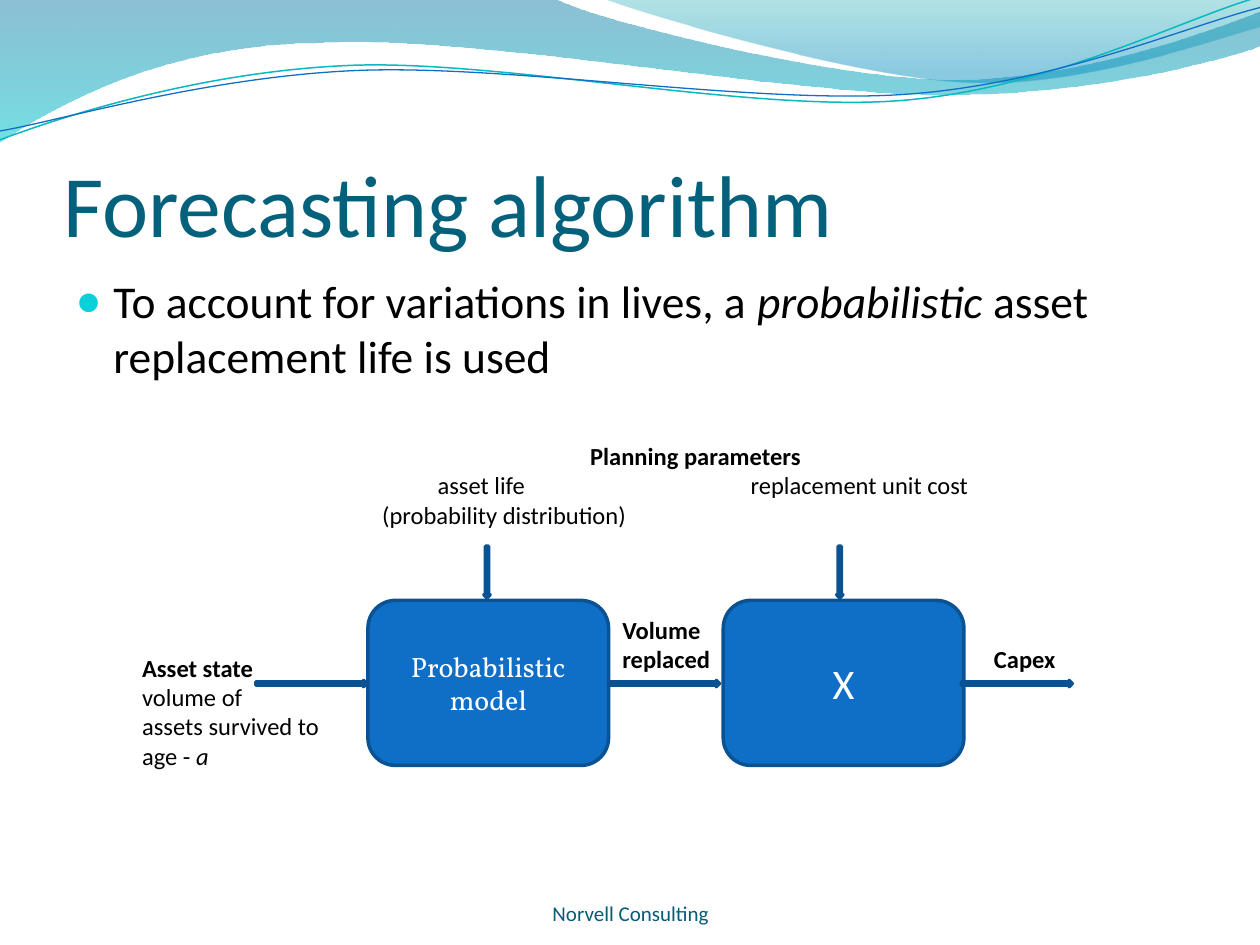
from lxml import etree
from pptx import Presentation
from pptx import util as u
from pptx.dml.color import RGBColor
from pptx.enum import shapes, text
from pptx.oxml.ns import qn

# Lengths are cells of a grid with 100 columns and 75 rows.
CELL = u.Inches(0.1)
HUES = {
    "title": "04617B", "foot": "045D75", "ink": "000000", "white": "FFFFFF",
    "box": "0F6FC6", "edge": "0B5292", "dot": "0BD0D9", "teal": "0AB8BF",
    "sea": "0074A1", "aqua": "00C6CF", "mint": "00A1A9", "sky": "008BBF",
}
LEFT, MID = text.PP_ALIGN.LEFT, text.PP_ALIGN.CENTER
ARROW = 0.5


def hue(name):
    return RGBColor.from_string(HUES[name])


def cells(*nums):
    return [u.Emu(round(n * CELL)) for n in nums]


def node(tag, **attrs):
    return etree.Element(qn(tag), {k: str(v) for k, v in attrs.items()})


def write(par, line, size, color="ink", bold=False, align=LEFT, face="Calibri"):
    """Fill a paragraph; words between asterisks are italic."""
    for i, part in enumerate(line.split("*")):
        if part:
            run = par.add_run()
            run.text = part
            if i % 2:
                run.font.italic = True
    par.alignment = align
    font = par.font
    font.name, font.size, font.bold = face, u.Pt(size), bold
    font.color.rgb = hue(color)


def indent(par, left, first=0):
    props = par._p.get_or_add_pPr()
    for key, size in zip(("marL", "indent"), cells(left, first)):
        props.set(key, str(size))


def bullet(par, char, color, share):
    """Set the bullet ahead of the paragraph's default font."""
    tint = node("a:buClr")
    tint.append(node("a:srgbClr", val=HUES[color]))
    last = par._p.pPr[-1]
    for item in (tint, node("a:buSzPct", val=share * 1000), node("a:buChar", char=char)):
        last.addprevious(item)


def place(shape, *spot):
    shape.left, shape.top, shape.width, shape.height = cells(*spot)


def label(slide, spot, lines, size=14, **look):
    """Add a text box whose first line is bold, and return its frame."""
    frame = slide.shapes.add_textbox(*cells(*spot)).text_frame
    frame.word_wrap = True
    for i, line in enumerate(lines):
        par = frame.add_paragraph() if i else frame.paragraphs[0]
        write(par, line, size, **{"bold": i == 0, **look})
    return frame


def block(slide, kind, spot):
    shape = slide.shapes.add_shape(kind, *cells(*spot))
    shape.shadow.inherit = False
    shape.fill.solid()
    shape.fill.fore_color.rgb = hue("box")
    shape.line.color.rgb = hue("edge")
    shape.line.width = u.Pt(2)
    return shape


def box(slide, left, top, line, size, face):
    shape = block(slide, shapes.MSO_SHAPE.ROUNDED_RECTANGLE, (left, top, 19.1, 13.1))
    frame = shape.text_frame
    frame.vertical_anchor = text.MSO_ANCHOR.MIDDLE
    write(frame.paragraphs[0], line, size, "white", align=MID, face=face)


def arrow(slide, left, top, size, turn=0):
    shape = block(slide, shapes.MSO_SHAPE.RIGHT_ARROW, (left, top, size, ARROW))
    shape.rotation = turn


def curve(slide, start, legs, close):
    """Draw an outline; a leg is an end point or a Bezier's last three points."""
    pen = slide.shapes.build_freeform(*cells(*start))
    pen.add_line_segments([cells(*p) for leg in legs for p in leg], close=close)
    shape = pen.convert_to_shape()
    shape.shadow.inherit = False
    lines = iter(list(shape._element.spPr.iter(qn("a:lnTo"))))
    for leg in legs:
        group = [next(lines) for _ in leg]
        if len(group) == 3:
            bend = node("a:cubicBezTo")
            group[0].addprevious(bend)
            for line in group:
                bend.append(line[0])
                line.getparent().remove(line)
    return shape


def wave(slide, start, legs, stops):
    """Add a closed wave; a stop is position, colour and opacity in percent."""
    shape = curve(slide, start, legs, True)
    shape.line.fill.background()
    shape.fill.gradient()
    shape.fill.gradient_angle = 270
    for stop, (pos, color, _) in zip(shape.fill.gradient_stops, stops):
        stop.position = pos
        stop.color.rgb = hue(color)
    tints = shape._element.spPr.iter(qn("a:srgbClr"))
    for tint, (_, _, alpha) in zip(list(tints), stops):
        tint.append(node("a:alpha", val=alpha * 1000))


def thread(slide, start, legs, color, width):
    shape = curve(slide, start, legs, False)
    shape.fill.background()
    shape.line.color.rgb = hue(color)
    shape.line.width = u.Pt(width)


def banner(slide):
    wave(slide, (0, -0.1), [
        [(44, -0.1)],
        [(47.6, 1.7), (66.4, 6.3), (75.8, 6.3)],
        [(85.3, 6.3), (95.8, 2.6), (100, 0.9)],
        [(100.1, 3.6)],
        [(98.3, 4.4), (87, 7.6), (74.6, 7.5)],
        [(62.2, 7.5), (38.2, 2.8), (25.7, 3.4)],
        [(12.9, 3.5), (4.6, 8.3), (-0.1, 11.3)],
    ], [(0, "sea", 45), (1, "aqua", 55)])
    wave(slide, (47.9, -0.1), [
        [(50.9, 1.1), (68.2, 6.2), (76.9, 6.5)],
        [(85.6, 6.9), (96.1, 3.2), (100, 2.1)],
        [(100, 0)],
    ], [(0, "mint", 30), (0.8, "sky", 45)])
    thread(slide, (0, 11.1), [
        [(4.8, 9.3), (15.8, 5.7), (27.7, 5.2)],
        [(39.5, 4.7), (59.3, 8.9), (71.3, 8)],
        [(83.3, 7.1), (93.8, 1.5), (99.8, -0.2)],
    ], "teal", 0.85)
    thread(slide, (0, 10.4), [
        [(4.7, 9.6), (16.4, 6.1), (28.3, 5.6)],
        [(40.3, 5.1), (59.7, 8.3), (71.7, 7.5)],
        [(83.6, 6.7), (94.1, 2.1), (100, 0.6)],
    ], "box", 0.75)


def heads(slide):
    title, body = slide.placeholders
    place(title, 5, 7.75, 90, 12.5)
    frame = title.text_frame
    frame.vertical_anchor = text.MSO_ANCHOR.BOTTOM
    frame.margin_left = frame.margin_right = frame.margin_bottom = 0
    write(frame.paragraphs[0], "Forecasting algorithm", 50, "title")

    place(body, 5, 21.2, 90, 10.7)
    par = body.text_frame.paragraphs[0]
    write(par, "To account for variations in lives, a *probabilistic* asset "
               "replacement life is used", 26)
    par.space_before = u.Pt(5)
    indent(par, 3, -3)
    bullet(par, "●", "dot", 95)


def params(slide):
    frame = label(slide, (29.35, 34.5, 51.7, 8.1), [
        "Planning parameters", "asset life", "(probability distribution)"])
    frame.paragraphs[0].alignment = MID
    indent(frame.paragraphs[1], 4.4)
    label(slide, (58.6, 36.85, 20, 3.4), ["replacement unit cost"], bold=False)


def main():
    deck = Presentation()
    deck.slide_width, deck.slide_height = cells(100, 75)
    slide = deck.slides.add_slide(deck.slide_layouts[1])
    banner(slide)
    heads(slide)
    foot = label(slide, (31.7, 69.5, 36.7, 4), ["Norvell Consulting"], 12,
                 color="foot", bold=False, align=MID)
    foot.vertical_anchor = text.MSO_ANCHOR.BOTTOM
    foot.margin_bottom = 0

    box(slide, 29.2, 47.65, "Probabilistic model", 16, "Vollkorn")
    box(slide, 57.4, 47.65, "X", 24, "Calibri")
    for left in (20.3, 48.3, 76.3):
        arrow(slide, left, 54, 8.8)
    for left in (36.6, 64.6):
        arrow(slide, left, 45.15, 4.1, 90)

    label(slide, (10.3, 51.3, 17.3, 10.4),
          ["Asset state", "volume of", "assets survived to age - *a*"])
    label(slide, (48.4, 48.3, 9.1, 7.4), ["Volume", "replaced"], bold=True)
    label(slide, (77.9, 50.6, 9.1, 3.4), ["Capex"])
    params(slide)
    deck.save("out.pptx")


if __name__ == "__main__":
    main()
